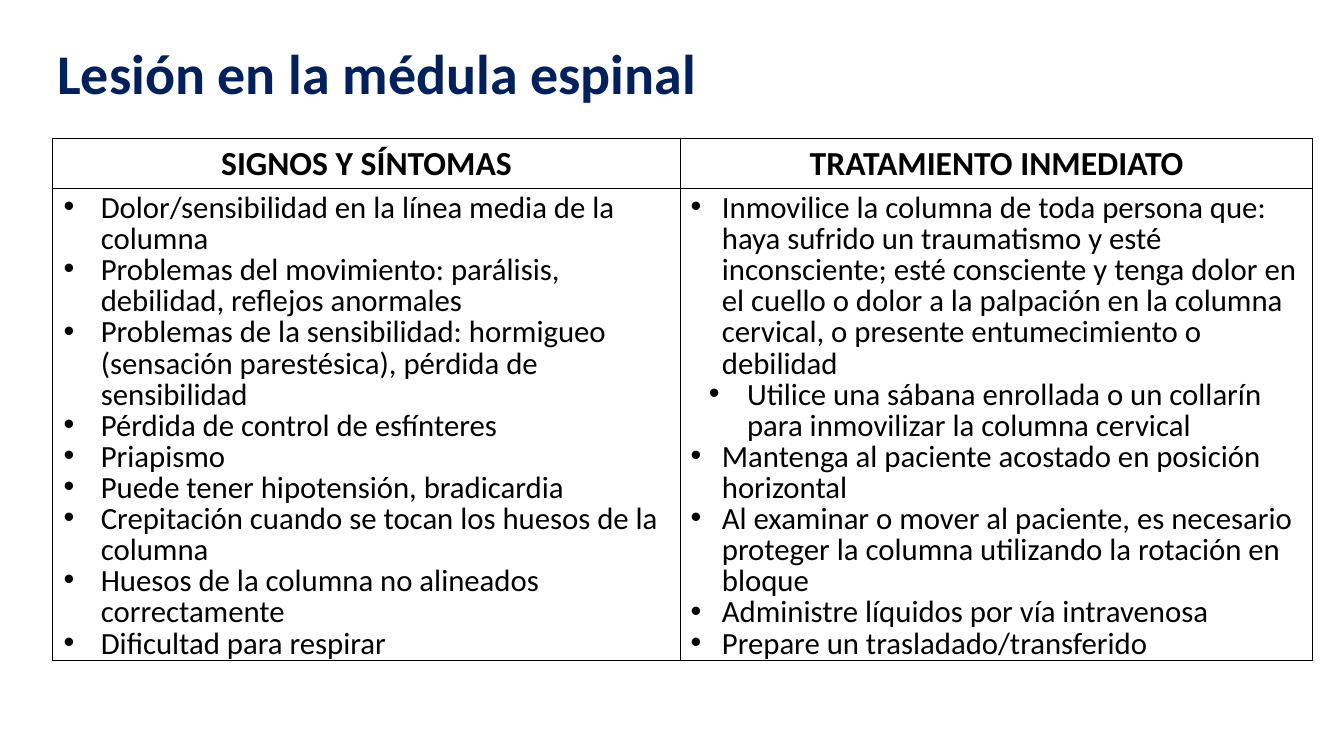
from lxml.etree import SubElement
from pptx import Presentation
from pptx.dml.color import RGBColor
from pptx.enum.text import MSO_ANCHOR, PP_ALIGN
from pptx.oxml.ns import qn
from pptx.util import Inches, Pt

INK = "000000"


def write(paragraph, text, size=22, color=INK, bold=False, align=PP_ALIGN.LEFT,
          spacing=1.0, level=0, indent=None):
    paragraph.alignment = align
    paragraph.line_spacing = spacing
    paragraph.level = level
    if indent:
        left, hanging = indent
        props = paragraph._p.get_or_add_pPr()
        props.set("marL", str(Inches(left)))
        props.set("indent", str(Inches(-hanging)))
        bullet_color = SubElement(props, qn("a:buClr"))
        SubElement(bullet_color, qn("a:srgbClr"), val=INK)
        SubElement(props, qn("a:buFont"), typeface="Arial")
        SubElement(props, qn("a:buChar"), char="•")
    run = paragraph.add_run()
    run.text = text
    run.font.name = "Calibri"
    run.font.size = Pt(size)
    run.font.bold = bold
    run.font.color.rgb = RGBColor.from_string(color)


def outline(cell):
    props = cell._tc.get_or_add_tcPr()
    for position, side in enumerate(("lnL", "lnR", "lnT", "lnB")):
        line = SubElement(props, qn(f"a:{side}"), w=str(Pt(0.96)))
        fill = SubElement(line, qn("a:solidFill"))
        SubElement(fill, qn("a:srgbClr"), val=INK)
        props.insert(position, line)


signs_indent = (0.38, 0.37)
care_indent = (0.31, 0.31)
detail_indent = (0.56, 0.38)

signs = [(text, 0, signs_indent) for text in (
    "Dolor/sensibilidad en la línea media de la columna",
    "Problemas del movimiento: parálisis, debilidad, reflejos anormales",
    "Problemas de la sensibilidad: hormigueo (sensación parestésica), pérdida de sensibilidad",
    "Pérdida de control de esfínteres",
    "Priapismo",
    "Puede tener hipotensión, bradicardia",
    "Crepitación cuando se tocan los huesos de la columna",
    "Huesos de la columna no alineados correctamente",
    "Dificultad para respirar",
)]
treatment = [
    ("Inmovilice la columna de toda persona que: haya sufrido un traumatismo y esté "
     "inconsciente; esté consciente y tenga dolor en el cuello o dolor a la palpación "
     "en la columna cervical, o presente entumecimiento o debilidad", 0, care_indent),
    ("Utilice una sábana enrollada o un collarín para inmovilizar la columna cervical",
     1, detail_indent),
    ("Mantenga al paciente acostado en posición horizontal", 0, care_indent),
    ("Al examinar o mover al paciente, es necesario proteger la columna utilizando "
     "la rotación en bloque", 0, care_indent),
    ("Administre líquidos por vía intravenosa", 0, care_indent),
    ("Prepare un trasladado/transferido", 0, care_indent),
]
columns = [
    ("SIGNOS Y SÍNTOMAS", 6.23, signs),
    ("TRATAMIENTO INMEDIATO", 6.27, treatment),
]

deck = Presentation()
deck.slide_width, deck.slide_height = Inches(13.33), Inches(7.5)
slide = deck.slides.add_slide(deck.slide_layouts[6])

title = slide.shapes.add_textbox(Inches(0.47), Inches(0.03), Inches(12.4), Inches(1.45)).text_frame
title.word_wrap = True
title.vertical_anchor = MSO_ANCHOR.MIDDLE
write(title.paragraphs[0], "Lesión en la médula espinal", size=40, color="002060",
      bold=True, spacing=0.9)

care_table = slide.shapes.add_table(2, 2, Inches(0.52), Inches(1.37), Inches(12.5), Inches(5.13)).table
care_table.first_row = False
care_table.horz_banding = False
for row, height in zip(care_table.rows, (0.45, 4.68)):
    row.height = Inches(height)

for index, (heading, width, points) in enumerate(columns):
    care_table.columns[index].width = Inches(width)
    heading_cell, points_cell = care_table.cell(0, index), care_table.cell(1, index)
    for cell in (heading_cell, points_cell):
        cell.fill.background()
        outline(cell)
    write(heading_cell.text_frame.paragraphs[0], heading, size=24, bold=True,
          align=PP_ALIGN.CENTER)
    body = points_cell.text_frame
    for number, (text, level, indent) in enumerate(points):
        paragraph = body.add_paragraph() if number else body.paragraphs[0]
        write(paragraph, text, spacing=0.83, level=level, indent=indent)

deck.save("out.pptx")
